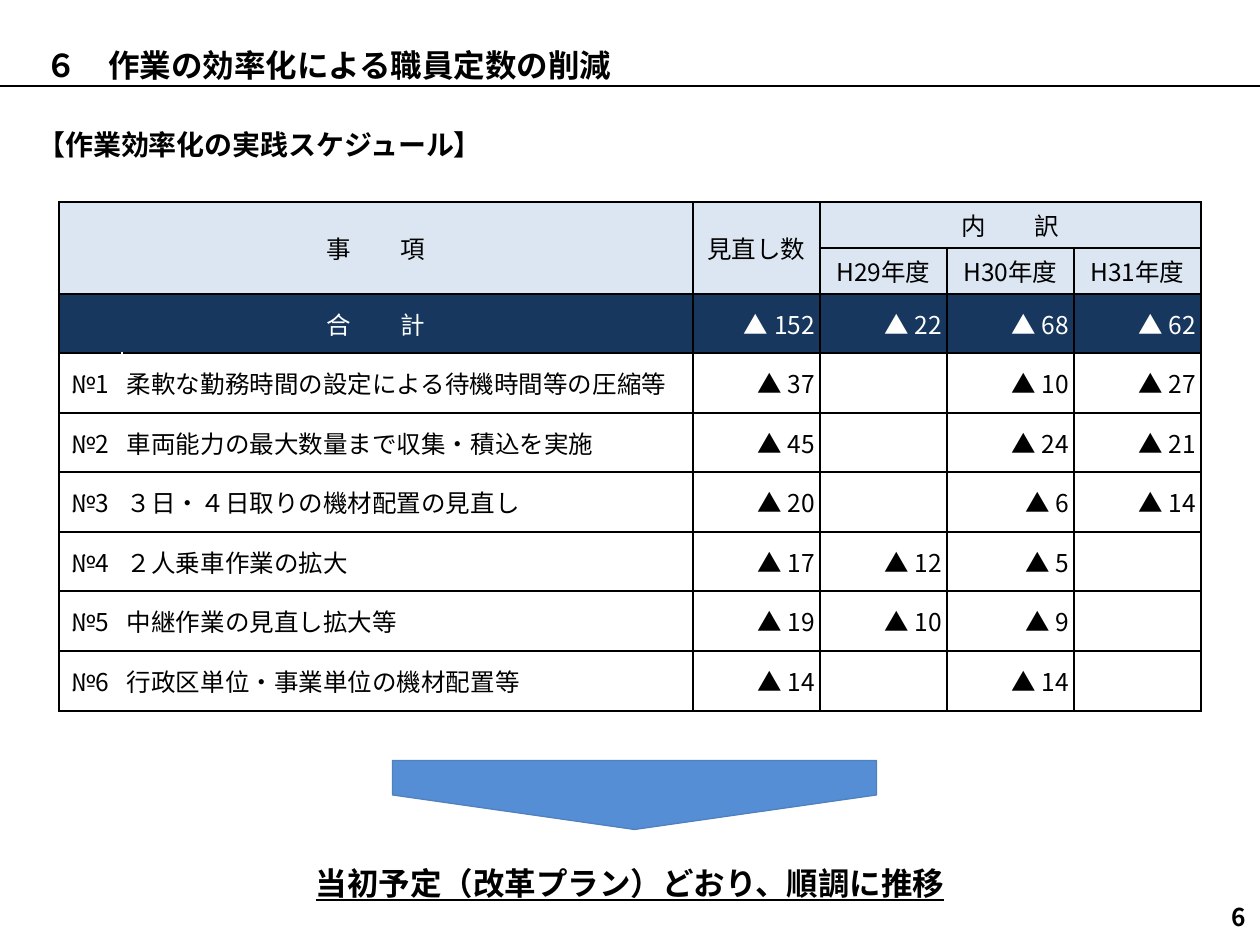
from lxml import etree
from pptx import Presentation
from pptx.dml.color import RGBColor
from pptx.enum import shapes, text
from pptx.oxml import ns
from pptx.util import Pt

PX = 914400 // 126
FONT = "Noto Sans CJK JP"
HEX = {"ink": "000000", "white": "FFFFFF", "head": "DCE6F2",
       "total": "17375E", "arrow": "558ED5", "edge": "4F81BD"}
RGB = {name: RGBColor.from_string(code) for name, code in HEX.items()}
LEFT, MID, RIGHT = text.PP_ALIGN.LEFT, text.PP_ALIGN.CENTER, text.PP_ALIGN.RIGHT


def write(frame, words, size, align=LEFT, color="ink", bold=False):
    frame.text = words
    frame.word_wrap = True
    para = frame.paragraphs[0]
    para.alignment = align
    font = para.font
    font.name, font.size, font.bold = FONT, Pt(size), bold
    font.color.rgb = RGB[color]
    latin = para._p.pPr.find(ns.qn("a:defRPr")).find(ns.qn("a:latin"))
    east = etree.Element(ns.qn("a:ea"), typeface=FONT)
    latin.addnext(east)
    return font


def border(cell, side, color, width):
    line = etree.SubElement(cell._tc.get_or_add_tcPr(), ns.qn("a:ln" + side),
                            w=str(Pt(width)))
    fill = etree.SubElement(line, ns.qn("a:solidFill"))
    etree.SubElement(fill, ns.qn("a:srgbClr"), val=HEX[color])


prs = Presentation()
prs.slide_width, prs.slide_height = 1260 * PX, 945 * PX
slide = prs.slides.add_slide(prs.slide_layouts[5])

# Title and the rule below it
title = slide.shapes.title
title.left, title.top, title.width, title.height = 1 * PX, 0, 1259 * PX, 86 * PX
frame = title.text_frame
write(frame, "　６　作業の効率化による職員定数の削減", 18, bold=True)
frame.vertical_anchor = text.MSO_ANCHOR.BOTTOM
frame.margin_bottom = 2 * PX
rule = slide.shapes.add_connector(shapes.MSO_CONNECTOR.STRAIGHT,
                                  0, 86 * PX, 1260 * PX, 86 * PX)
rule.line.color.rgb, rule.line.width = RGB["ink"], Pt(0.75)
etree.SubElement(rule._element.spPr, ns.qn("a:effectLst"))

# Heading, conclusion and page number
for words, box, size, align, inset, under in [
        ("【作業効率化の実践スケジュール】", (25, 116, 1183, 47), 16, LEFT, 15, False),
        ("当初予定（改革プラン）どおり、順調に推移", (233, 849, 794, 59), 18, MID, 15, True),
        ("6", (1194, 892, 64, 49), 14, RIGHT, 6, False)]:
    frame = slide.shapes.add_textbox(*[n * PX for n in box]).text_frame
    write(frame, words, size, align, bold=True).underline = under
    frame.vertical_anchor = text.MSO_ANCHOR.MIDDLE
    frame.margin_top, frame.margin_bottom = inset * PX, 6 * PX

# Schedule table
rows = [
    ["事　　項", "", "見直し数", "内　　訳", "", ""],
    ["", "", "", "H29年度", "H30年度", "H31年度"],
    ["合　　計", "", 152, 22, 68, 62],
    ["№1", "柔軟な勤務時間の設定による待機時間等の圧縮等", 37, "", 10, 27],
    ["№2", "車両能力の最大数量まで収集・積込を実施", 45, "", 24, 21],
    ["№3", "３日・４日取りの機材配置の見直し", 20, "", 6, 14],
    ["№4", "２人乗車作業の拡大", 17, 12, 5, ""],
    ["№5", "中継作業の見直し拡大等", 19, 10, 9, ""],
    ["№6", "行政区単位・事業単位の機材配置等", 14, "", 14, ""],
]
wide = [63, 571] + [127] * 4
high = [46] * 2 + [59, 60] * 3 + [60]
table = slide.shapes.add_table(len(rows), len(wide), 59 * PX, 202 * PX,
                               sum(wide) * PX, sum(high) * PX).table
table.first_row = table.horz_banding = False
for col, width in zip(table.columns, wide):
    col.width = width * PX
for row, height in zip(table.rows, high):
    row.height = height * PX

for r, row in enumerate(rows):
    for c, value in enumerate(row):
        cell = table.cell(r, c)
        cell.margin_left = cell.margin_right = 5 * PX
        cell.margin_top = cell.margin_bottom = 5 * PX
        cell.vertical_anchor = text.MSO_ANCHOR.MIDDLE
        if r < 2 or c == 0:
            align = MID
        else:
            align = LEFT if c == 1 else RIGHT
        words = f"▲ {value}" if isinstance(value, int) else value
        write(cell.text_frame, words, 14, align, "white" if r == 2 else "ink")

        # Thin lines around the total; a white divider after each number
        for side in "LRTB":
            split = r > 2 and (c, side) in [(0, "R"), (1, "L")]
            edge = {"T": r, "B": r + 1}.get(side)
            border(cell, side, "white" if split else "ink",
                   0.75 if split or edge in (2, 3) else 1)
        if r > 2:
            cell.fill.background()
        else:
            cell.fill.solid()
            cell.fill.fore_color.rgb = RGB["total" if r == 2 else "head"]

for r, c, r2, c2 in [(0, 0, 1, 1), (0, 2, 1, 2), (0, 3, 0, 5), (2, 0, 2, 1)]:
    table.cell(r, c).merge(table.cell(r2, c2))

# Arrow down to the conclusion
arrow = slide.shapes.add_shape(shapes.MSO_SHAPE.PENTAGON,
                               600 * PX, 553 * PX, 69 * PX, 484 * PX)
arrow.rotation = 90
arrow.shadow.inherit = False
arrow.fill.solid()
arrow.fill.fore_color.rgb = RGB["arrow"]
arrow.line.color.rgb, arrow.line.width = RGB["edge"], Pt(0.75)

prs.save("out.pptx")
